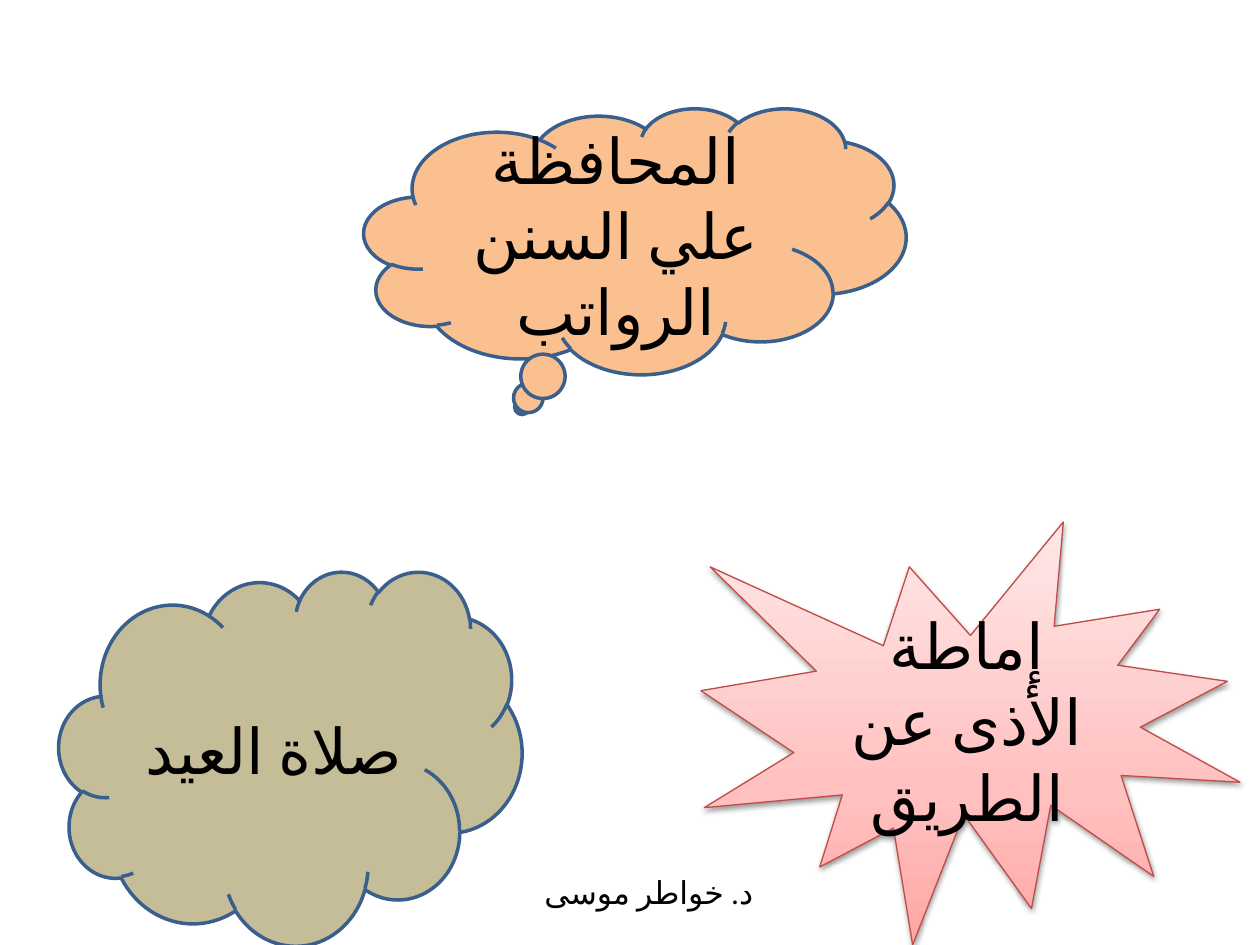
from lxml import etree
from pptx import Presentation
from pptx import util as u
from pptx.dml.color import RGBColor
from pptx.enum import lang, shapes, text
from pptx.oxml.ns import qn

PX = 914400 / 126
BLACK = RGBColor(0x00, 0x00, 0x00)
BLUE = RGBColor(0x3A, 0x5F, 0x8C)
RED = RGBColor(0xBF, 0x4C, 0x48)
PEACH = RGBColor(0xFA, 0xC0, 0x90)
TAN = RGBColor(0xC4, 0xBD, 0x97)
PINKS = [(0, "FFA6A5"), (35, "FFC0BF"), (100, "FFE7E7")]


def scale(*box):
    return [round(n * PX) for n in box]


def write(frame, words, size):
    frame.word_wrap = True
    run = frame.paragraphs[0].add_run()
    run.text = words
    run.font.size = u.Pt(size)
    run.font.name = "Calibri"
    run.font.language_id = lang.MSO_LANGUAGE_ID.ARABIC_EGYPT
    run.font.color.rgb = BLACK
    # Arabic letters take the complex-script font
    etree.SubElement(run.font._element, qn("a:cs"), typeface="Calibri")


deck = Presentation()
deck.slide_width, deck.slide_height = scale(1260, 945)
slide = deck.slides.add_slide(deck.slide_layouts[6])

# Three good deeds; the burst has no flat fill
KIND = shapes.MSO_SHAPE
deeds = [
    (KIND.CLOUD_CALLOUT, (364, 108, 542, 266), PEACH, BLUE, 2, "المحافظة علي السنن الرواتب"),
    (KIND.EXPLOSION1, (701, 522, 539, 423), None, RED, 0.75, "إماطة الأذى عن الطريق"),
    (KIND.CLOUD, (59, 571, 463, 374), TAN, BLUE, 2, "صلاة العيد"),
]
for kind, box, fill, line, width, words in deeds:
    shape = slide.shapes.add_shape(kind, *scale(*box))
    shape.shadow.inherit = False
    shape.line.color.rgb = line
    shape.line.width = u.Pt(width)
    if fill:
        shape.fill.solid()
        shape.fill.fore_color.rgb = fill
    else:
        # Pink gradient, darkest at the bottom
        shape.fill.gradient()
        shape.fill.gradient_angle = 90
        props = shape._element.spPr
        stops = props.find(".//" + qn("a:gsLst"))
        for stop in list(stops):
            stops.remove(stop)
        for place, tone in PINKS:
            stop = etree.SubElement(stops, qn("a:gs"), pos=str(place * 1000))
            etree.SubElement(stop, qn("a:srgbClr"), val=tone)
        # Soft shadow below the burst
        shade = etree.SubElement(
            props.find(qn("a:effectLst")), qn("a:outerShdw"),
            blurRad="40000", dist="20000", dir="5400000", rotWithShape="0")
        tint = etree.SubElement(shade, qn("a:srgbClr"), val="000000")
        etree.SubElement(tint, qn("a:alpha"), val="38000")
    frame = shape.text_frame
    frame.vertical_anchor = text.MSO_ANCHOR.MIDDLE
    frame.paragraphs[0].alignment = text.PP_ALIGN.CENTER
    write(frame, words, 36)

# Author
name = slide.shapes.add_textbox(*scale(532, 867, 276, 50))
name.text_frame.auto_size = text.MSO_AUTO_SIZE.SHAPE_TO_FIT_TEXT
write(name.text_frame, "د. خواطر موسى", 18)

deck.save("out.pptx")
